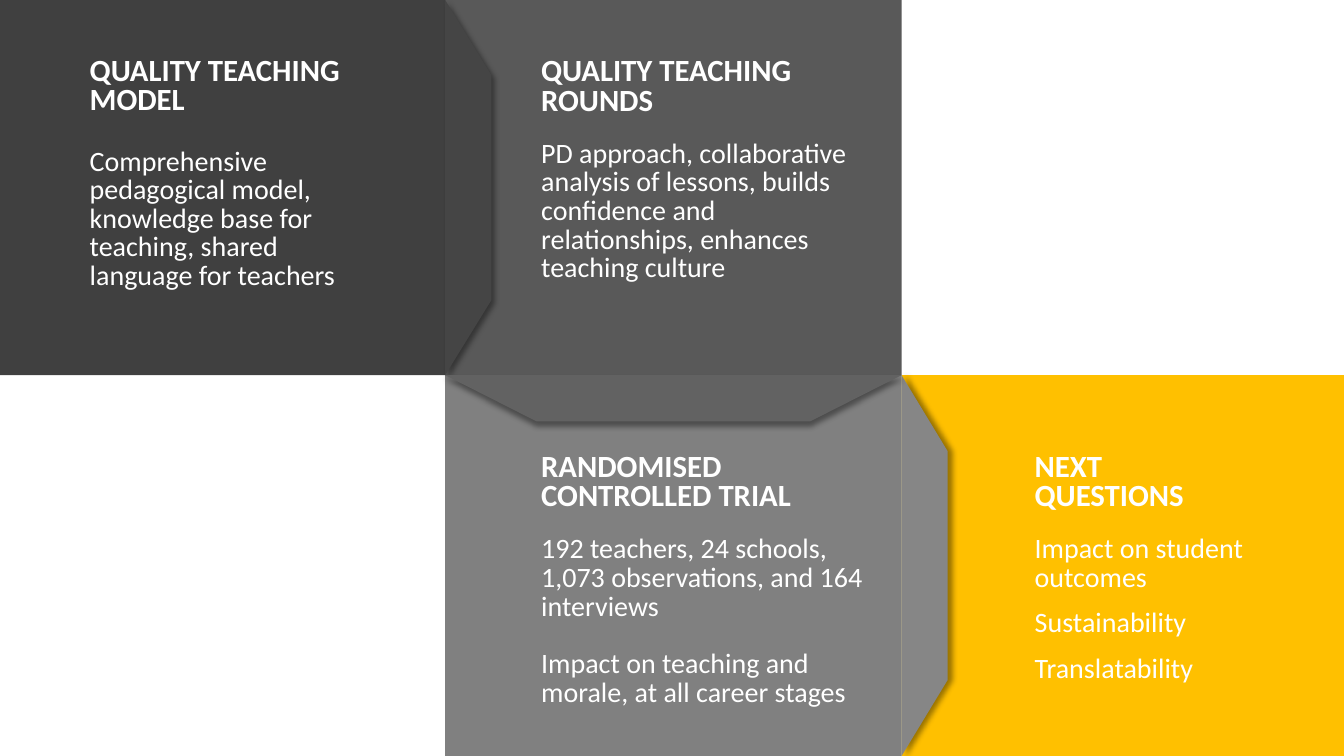
from lxml.etree import SubElement
from pptx import Presentation
from pptx.dml.color import RGBColor
from pptx.enum.shapes import MSO_SHAPE
from pptx.enum.text import MSO_AUTO_SIZE
from pptx.oxml.ns import qn
from pptx.util import Pt

COLORS = {
    "model": "404040",
    "model_fold": "454545",
    "rounds": "595959",
    "rounds_fold": "626262",
    "trial": "808080",
    "trial_fold": "868686",
    "questions": "FFC000",
    "text": "FFFFFF",
    "shadow": "000000",
}
SLIDE_WIDTH, SLIDE_HEIGHT = 960, 540
COLUMN_1, COLUMN_2, ROW_1 = 318, 644, 268
FOLD_DEPTH = 33


def add_block(slide, kind, left, top, width, height, color):
    shape = slide.shapes.add_shape(kind, Pt(left), Pt(top), Pt(width), Pt(height))
    shape.fill.solid()
    shape.fill.fore_color.rgb = RGBColor.from_string(COLORS[color])
    shape.line.fill.background()
    shape.shadow.inherit = False
    return shape


def add_panel(slide, left, top, right, bottom, color):
    add_block(slide, MSO_SHAPE.RECTANGLE, left, top, right - left, bottom - top, color)


def add_fold(slide, left, top, length, color, shadow_angle, sideways=False):
    if sideways:
        left += (FOLD_DEPTH - length) / 2
        top += (length - FOLD_DEPTH) / 2
    shape = add_block(slide, MSO_SHAPE.FLOWCHART_MANUAL_OPERATION,
                      left, top, length, FOLD_DEPTH, color)
    shape.rotation = 270 if sideways else 0
    effects = shape._element.spPr.find(qn("a:effectLst"))
    shadow = SubElement(effects, qn("a:outerShdw"), blurRad=str(Pt(4)), dist=str(Pt(3)),
                        dir=str(shadow_angle * 60000), algn="ctr", rotWithShape="0")
    shadow_color = SubElement(shadow, qn("a:srgbClr"), val=COLORS["shadow"])
    SubElement(shadow_color, qn("a:alpha"), val="40000")


def format_paragraph(paragraph, text, size, line_spacing, space_before, bold=False):
    paragraph.text = text
    paragraph.line_spacing = line_spacing
    paragraph.space_before = Pt(space_before)
    paragraph.font.name = "Calibri"
    paragraph.font.size = Pt(size)
    paragraph.font.bold = bold
    paragraph.font.color.rgb = RGBColor.from_string(COLORS["text"])


def add_topic(slide, left, top, width, height, title, details):
    box = slide.shapes.add_textbox(Pt(left), Pt(top), Pt(width), Pt(height))
    frame = box.text_frame
    frame.word_wrap = True
    frame.auto_size = MSO_AUTO_SIZE.SHAPE_TO_FIT_TEXT
    format_paragraph(frame.paragraphs[0], title, 22, 0.8, 0, bold=True)
    for text, space_before in details:
        format_paragraph(frame.add_paragraph(), text, 20, 0.85, space_before)


def main():
    presentation = Presentation()
    presentation.slide_width = Pt(SLIDE_WIDTH)
    presentation.slide_height = Pt(SLIDE_HEIGHT)
    slide = presentation.slides.add_slide(presentation.slide_layouts[6])
    lower_height = SLIDE_HEIGHT - ROW_1

    add_panel(slide, COLUMN_2, ROW_1, SLIDE_WIDTH, SLIDE_HEIGHT, "questions")
    add_panel(slide, COLUMN_1, ROW_1, COLUMN_2, SLIDE_HEIGHT, "trial")
    add_fold(slide, COLUMN_2, ROW_1, lower_height, "trial_fold", 0, sideways=True)
    add_panel(slide, COLUMN_1, 0, COLUMN_2, ROW_1, "rounds")
    add_panel(slide, 0, 0, COLUMN_1, ROW_1, "model")
    add_fold(slide, COLUMN_1, 0, ROW_1, "model_fold", 45, sideways=True)
    add_fold(slide, COLUMN_1, ROW_1, COLUMN_2 - COLUMN_1, "rounds_fold", 90)

    add_topic(slide, 379.5, 38, 235.5, 169, "QUALITY TEACHING \nROUNDS", [
        ("PD approach, collaborative analysis of lessons, builds confidence and "
         "relationships, enhances teaching culture", 16.6),
    ])
    add_topic(slide, 57, 37.5, 224, 176, "QUALITY TEACHING MODEL", [
        ("Comprehensive pedagogical model, knowledge base for teaching, "
         "shared language for teachers", 22.6),
    ])
    add_topic(slide, 379.5, 320.5, 249, 190, "RANDOMISED \nCONTROLLED TRIAL", [
        ("192 teachers, 24 schools, 1,073 observations, and 164 interviews", 16.6),
        ("Impact on teaching and morale, at all career stages", 20.7),
    ])
    add_topic(slide, 732, 320.5, 196.5, 173, "NEXT \nQUESTIONS", [
        ("Impact on student outcomes", 16.6),
        ("Sustainability", 12),
        ("Translatability", 12),
    ])
    presentation.save("out.pptx")


if __name__ == "__main__":
    main()
